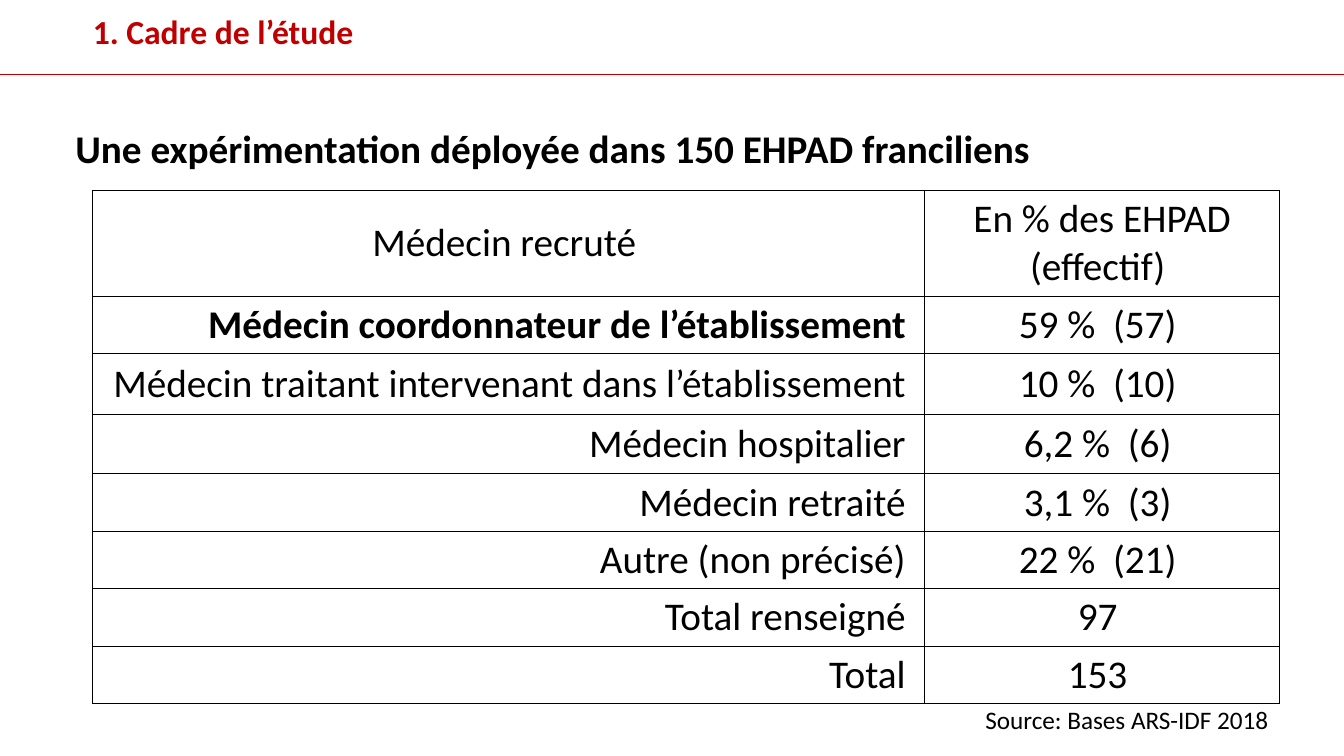
import pptx
import pptx.dml.color
import pptx.enum.text
import pptx.oxml
import pptx.oxml.ns
import pptx.util

Inches = pptx.util.Inches
Align = pptx.enum.text.PP_ALIGN
Anchor = pptx.enum.text.MSO_ANCHOR

DOCTORS = [
    ("Médecin recruté", "En % des EHPAD (effectif)"),
    ("Médecin coordonnateur de l’établissement", "59 %  (57)"),
    ("Médecin traitant intervenant dans l’établissement", "10 %  (10)"),
    ("Médecin hospitalier", "6,2 %  (6)"),
    ("Médecin retraité", "3,1 %  (3)"),
    ("Autre (non précisé)", "22 %  (21)"),
    ("Total renseigné", "97"),
    ("Total", "153"),
]
COLUMN_WIDTHS = [8.25, 3.52]
ROW_HEIGHTS = [1.05, 0.57, 0.6, 0.59] + [0.57] * 4
BOLD_ROW = 1


def colour(value):
    return pptx.dml.color.RGBColor.from_string(value)


class SlideBuilder:
    font = "Calibri"
    black = "000000"
    red = "C00000"

    def __init__(self, page):
        self.page = page

    def fill_text(self, frame, text, size, bold=False, color=black,
                  align=Align.LEFT, spacing=1.0):
        frame.text = text
        frame.word_wrap = True
        para = frame.paragraphs[0]
        para.alignment = align
        para.line_spacing = spacing
        para.space_before = pptx.util.Pt(0)
        span = para.runs[0]
        span.font.name = self.font
        span.font.size = pptx.util.Pt(size)
        span.font.bold = bold
        span.font.color.rgb = colour(color)

    def title(self, text, left, top, width, height):
        box = self.page.shapes.title
        box.left, box.top = Inches(left), Inches(top)
        box.width, box.height = Inches(width), Inches(height)
        box.line.color.rgb = colour(self.red)
        box.line.width = pptx.util.Pt(1.25)
        frame = box.text_frame
        self.fill_text(frame, text, 24, True, self.red, spacing=0.9)
        frame.auto_size = pptx.enum.text.MSO_AUTO_SIZE.NONE
        frame.vertical_anchor = Anchor.MIDDLE
        frame.margin_left = Inches(1.1)

    def text(self, text, left, top, width, height, size, **style):
        box = self.page.shapes.add_textbox(
            Inches(left), Inches(top), Inches(width), Inches(height))
        self.fill_text(box.text_frame, text, size, **style)

    def borders(self, cell):
        properties = cell._tc.get_or_add_tcPr()
        namespace = pptx.oxml.ns.nsdecls("a")
        for index, side in enumerate("LRTB"):
            properties.insert(index, pptx.oxml.parse_xml(
                f'<a:ln{side} {namespace} w="9525"><a:solidFill>'
                f'<a:srgbClr val="{self.black}"/></a:solidFill></a:ln{side}>'))

    def table(self, rows, left, top, widths, heights):
        table = self.page.shapes.add_table(
            len(rows), len(widths), Inches(left), Inches(top),
            Inches(sum(widths)), Inches(sum(heights))).table
        table.first_row = table.horz_banding = False
        for column, width in zip(table.columns, widths):
            column.width = Inches(width)
        for row, height in zip(table.rows, heights):
            row.height = Inches(height)
        for r, entries in enumerate(rows):
            for c, entry in enumerate(entries):
                cell = table.cell(r, c)
                is_label = r > 0 and c == 0
                # A no-break space keeps the text off the right edge
                self.fill_text(cell.text_frame, f"{entry} ", 28,
                               bold=is_label and r == BOLD_ROW,
                               align=Align.RIGHT if is_label else Align.CENTER)
                cell.vertical_anchor = Anchor.MIDDLE
                cell.fill.background()
                self.borders(cell)


def main():
    deck = pptx.Presentation()
    deck.slide_width, deck.slide_height = Inches(13.33), Inches(7.5)
    builder = SlideBuilder(deck.slides.add_slide(deck.slide_layouts[5]))

    # Section title and heading
    builder.title("1. Cadre de l’étude", -0.18, -0.08, 13.71, 0.82)
    builder.text("Une expérimentation déployée dans 150 EHPAD franciliens",
                 0.65, 1.24, 11.77, 0.6, 28, bold=True, spacing=0.9)

    # Recruited doctors and source
    builder.table(DOCTORS, 0.92, 1.89, COLUMN_WIDTHS, ROW_HEIGHTS)
    builder.text("Source: Bases ARS-IDF 2018", 6.07, 6.94, 6.61, 0.4, 18,
                 align=Align.RIGHT)

    deck.save("out.pptx")


if __name__ == "__main__":
    main()
